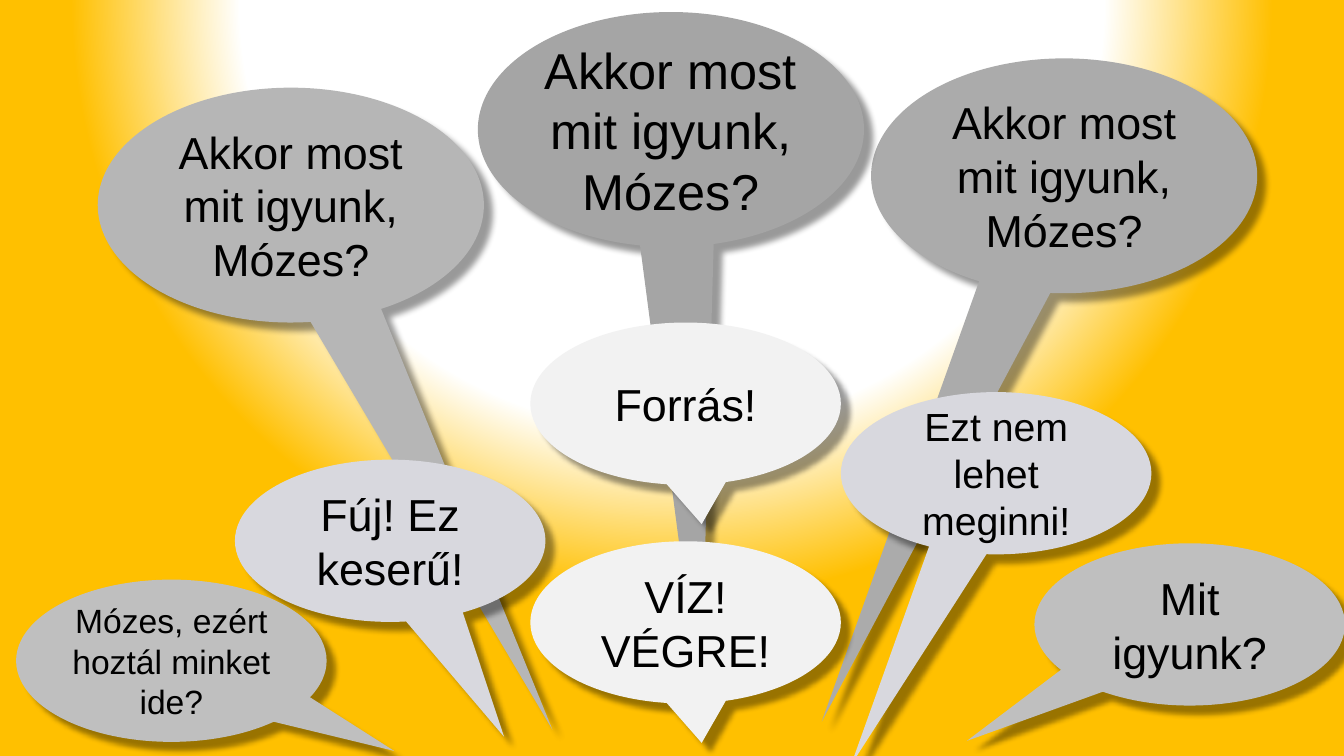
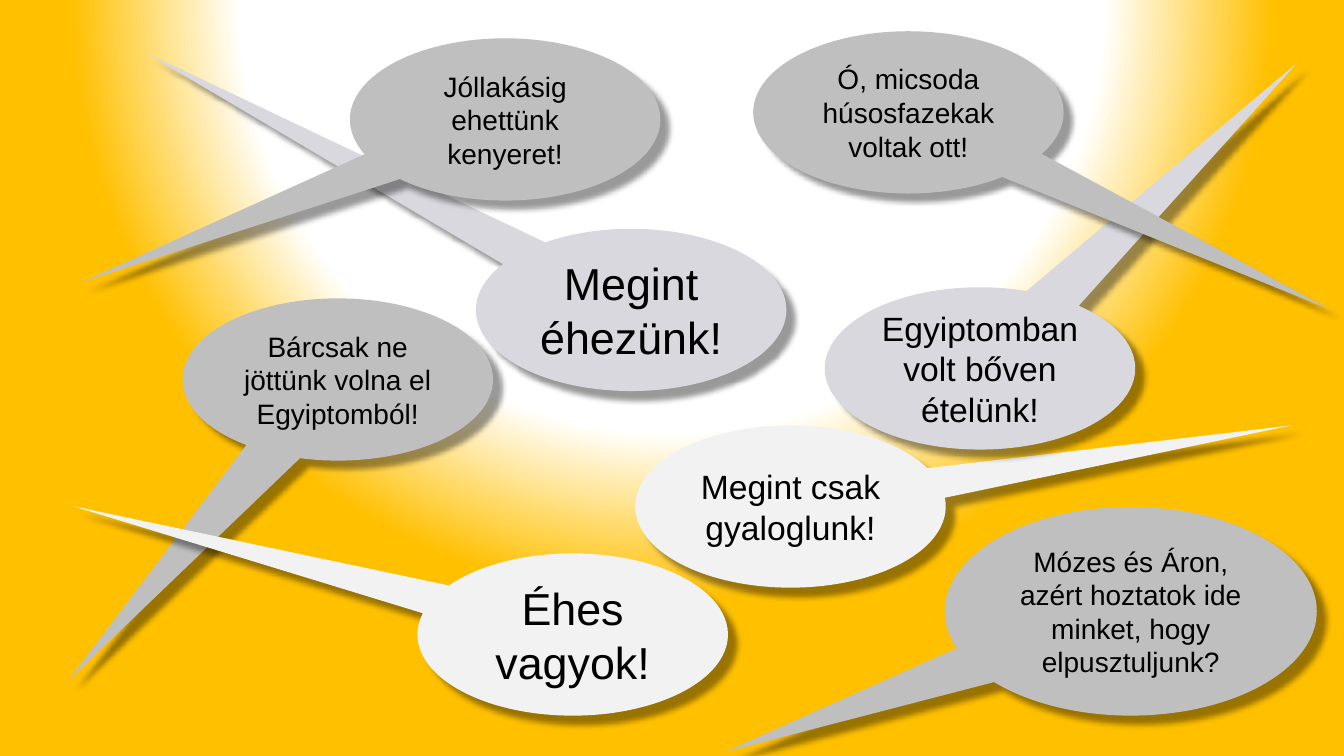
from pptx import Presentation
from pptx import util as u
from pptx.dml.color import RGBColor
from pptx.enum import shapes, text
from pptx.oxml import parse_xml
from pptx.oxml.ns import nsdecls, qn

FONT = "Arial"
COLORS = {
    "white": "FFFFFF", "amber": "FFC000", "black": "000000",
    "pale": "F2F2F2", "lilac": "D8D8DE", "silver": "BFBFBF",
    "gray_light": "B6B6B6", "gray_mid": "ABABAB", "gray_dark": "A5A5A5",
}
# Bubble sizes: width, height
SMALL, MEDIUM, LARGE = (3.08, 1.61), (3.69, 2.07), (3.83, 2.33)
QUESTION = "Akkor most mit igyunk, Mózes?"

# Each bubble: text, font size, fill, (left, top), tail tip, size
THIRST = [
    (QUESTION, 32, "gray_mid", (8.64, 0.58), (8.15, 7.16), LARGE),
    (QUESTION, 32, "gray_light", (0.97, 0.87), (5.48, 7.24), LARGE),
    ("Fúj! Ez keserű!", 32, "lilac", (2.33, 4.56), (5, 7.31), SMALL),
    ("Mózes, ezért hoztál minket ide?", 24, "silver", (0.16, 5.75), (3.91, 7.45), SMALL),
    ("Mit igyunk?", 32, "silver", (10.26, 5.39), (9.59, 7.35), SMALL),
    ("Ezt nem lehet meginni!", 28, "lilac", (8.34, 3.89), (8.44, 7.59), SMALL),
    (QUESTION, 36, "gray_dark", (4.74, 0.12), (6.95, 7.02), LARGE),
    ("VÍZ!\nVÉGRE!", 32, "pale", (5.26, 5.37), (6.96, 7.37), SMALL),
    ("Forrás!", 32, "pale", (5.26, 3.2), (6.96, 5.2), SMALL),
]
HUNGER = [
    ("Megint éhezünk!", 32, "lilac", (4.72, 2.27), (1.44, 0.52), SMALL),
    ("Bárcsak ne jöttünk volna el Egyiptomból!", 20, "silver",
     (1.81, 2.96), (0.68, 6.75), SMALL),
    ("Megint csak gyaloglunk!", 24, "pale", (6.3, 4.22), (12.81, 4.22), SMALL),
    ("Mózes és Áron, azért hoztatok ide minket, hogy elpusztuljunk?", 20, "silver",
     (9.37, 5.03), (7.19, 7.46), MEDIUM),
    ("Egyiptomban volt bőven ételünk!", 24, "lilac", (8.18, 2.85), (12.87, 0.62), SMALL),
    ("Éhes vagyok!", 32, "pale", (4.14, 5.49), (0.72, 5.02), SMALL),
    ("Ó, micsoda húsosfazekak voltak ott!", 20, "silver", (7.47, 0.31), (13.19, 3.07), SMALL),
    ("Jóllakásig ehettünk kenyeret!", 20, "silver", (3.47, 0.38), (0.81, 2.8), SMALL),
]


def rgb(name):
    return RGBColor.from_string(COLORS[name])


def set_background(master):
    """White glow from above, shared by all slides."""
    master.background.fill.gradient()
    grad = master.element.find(".//" + qn("p:bg")).find(".//" + qn("a:gradFill"))
    stops = "".join(
        f'<a:gs pos="{pos * 1000}"><a:srgbClr val="{COLORS[color]}"/></a:gs>'
        for pos, color in [(0, "white"), (56, "white"), (78, "amber")])
    grad.getparent().replace(grad, parse_xml(
        f'<a:gradFill {nsdecls("a")} rotWithShape="1"><a:gsLst>{stops}</a:gsLst>'
        '<a:path path="circle">'
        '<a:fillToRect l="50000" t="-80000" r="50000" b="180000"/>'
        '</a:path></a:gradFill>'))


def add_shadow(sp):
    sp.shadow.inherit = False
    effects = sp.element.spPr.find(qn("a:effectLst"))
    effects.append(parse_xml(
        f'<a:outerShdw {nsdecls("a")} blurRad="{u.Pt(4)}" dist="{u.Pt(9)}" '
        'dir="2700000" algn="tl" rotWithShape="0">'
        f'<a:srgbClr val="{COLORS["black"]}"><a:alpha val="40000"/></a:srgbClr>'
        '</a:outerShdw>'))


def write_text(tf, content, size=32, color="black", align=text.PP_ALIGN.CENTER):
    """One paragraph per line of content."""
    tf.word_wrap = True
    tf.vertical_anchor = text.MSO_ANCHOR.MIDDLE
    for i, line in enumerate(content.split("\n")):
        p = tf.add_paragraph() if i else tf.paragraphs[0]
        p.alignment = align
        r = p.add_run()
        r.text = line
        r.font.name = FONT
        r.font.size = u.Pt(size)
        r.font.color.rgb = rgb(color)


def add_bubble(s, content, font_size, fill, corner, tip, size):
    sp = s.shapes.add_shape(shapes.MSO_SHAPE.OVAL_CALLOUT,
                            *(u.Inches(v) for v in corner + size))
    # The tail is measured from the centre, in shares of the bubble's size
    for i in range(2):
        sp.adjustments[i] = (tip[i] - corner[i]) / size[i] - 0.5
    sp.fill.solid()
    sp.fill.fore_color.rgb = rgb(fill)
    sp.line.fill.background()
    add_shadow(sp)
    write_text(sp.text_frame, content, size=font_size)


def main():
    prs = Presentation()
    prs.slide_width, prs.slide_height = u.Inches(13.33), u.Inches(7.5)
    set_background(prs.slide_master)
    for bubbles in (THIRST, HUNGER):
        s = prs.slides.add_slide(prs.slide_layouts[6])
        for bubble in bubbles:
            add_bubble(s, *bubble)
    prs.save("out.pptx")


if __name__ == "__main__":
    main()
